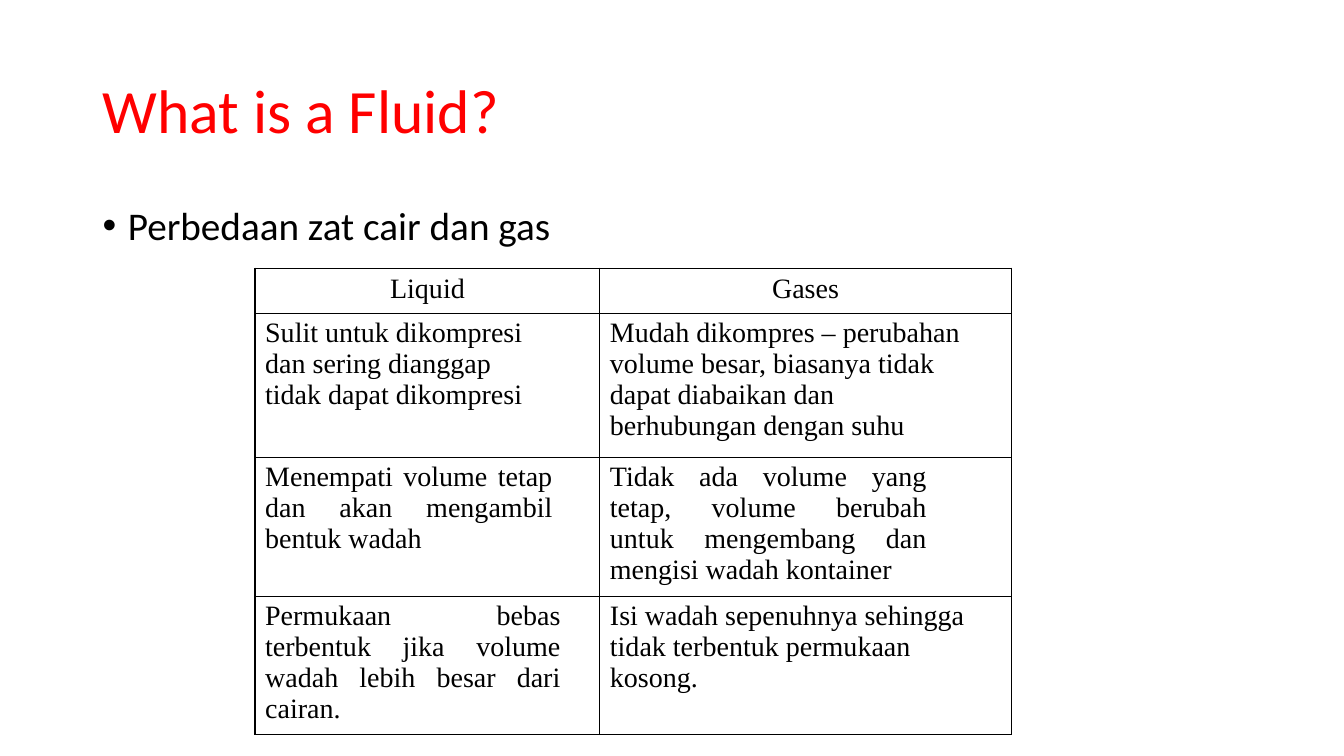
"""Build the slide that compares liquids and gases in a table."""
from lxml import etree
from pptx import Presentation
from pptx.dml.color import RGBColor
from pptx.enum.text import MSO_ANCHOR, PP_ALIGN
from pptx.oxml.ns import qn
from pptx.util import Inches, Pt

LEFT, CENTER, JUSTIFY = PP_ALIGN.LEFT, PP_ALIGN.CENTER, PP_ALIGN.JUSTIFY
MIDDLE, TOP = MSO_ANCHOR.MIDDLE, MSO_ANCHOR.TOP
BLACK, RED = "000000", "FF0000"
TITLE_FONT = {"name": "Calibri", "size": Pt(44)}
BODY_FONT = {"name": "Calibri", "size": Pt(28)}
TABLE_FONT = {"name": "Times New Roman", "size": Pt(20), "bold": False}
COLUMN_WIDTHS = [3.42, 4.08]
ROW_HEIGHTS = [0.45, 1.43, 1.1, 1.1]
# Each cell: text, alignment, left margin, right margin, top margin
ROWS = [
    [("Liquid", CENTER, 0, 0, 0.05), ("Gases", CENTER, 0, 0, 0.05)],
    [("Sulit untuk dikompresi dan sering dianggap tidak dapat dikompresi",
      LEFT, 0.1, 0.47, 0.04),
     ("Mudah dikompres – perubahan volume besar, biasanya tidak dapat "
      "diabaikan dan berhubungan dengan suhu", LEFT, 0.1, 0.4, 0.04)],
    [("Menempati volume tetap dan akan mengambil bentuk wadah",
      JUSTIFY, 0.1, 0.47, 0.04),
     ("Tidak ada volume yang tetap, volume berubah untuk mengembang dan "
      "mengisi wadah kontainer", JUSTIFY, 0.1, 0.84, 0.04)],
    [("Permukaan bebas terbentuk jika volume wadah lebih besar dari cairan.",
      JUSTIFY, 0.1, 0.39, 0.04),
     ("Isi wadah sepenuhnya sehingga tidak terbentuk permukaan kosong.",
      LEFT, 0.1, 0.4, 0.04)],
]


def color(value):
    return RGBColor.from_string(value)


def write(paragraph, text, alignment, font_values, text_color):
    paragraph.text = text
    paragraph.alignment = alignment
    for name, value in font_values.items():
        setattr(paragraph.font, name, value)
    paragraph.font.color.rgb = color(text_color)


presentation = Presentation()
presentation.slide_width = Inches(13.33)
presentation.slide_height = Inches(7.5)
slide = presentation.slides.add_slide(presentation.slide_layouts[5])

title = slide.shapes.title
title.left, title.top = Inches(0.92), Inches(0.4)
title.width, title.height = Inches(11.5), Inches(1.45)
title.text_frame.vertical_anchor = MIDDLE
title_paragraph = title.text_frame.paragraphs[0]
write(title_paragraph, "What is a Fluid?", LEFT, TITLE_FONT, RED)
title_paragraph.line_spacing = 0.9

body = slide.shapes.add_textbox(Inches(0.92), Inches(2), Inches(11.5), Inches(0.6))
body.text_frame.word_wrap = True
body_paragraph = body.text_frame.paragraphs[0]
properties = body_paragraph._p.get_or_add_pPr()
properties.set("marL", str(Inches(0.25)))
properties.set("indent", str(Inches(-0.25)))
etree.SubElement(properties, qn("a:buFont")).set("typeface", "Arial")
etree.SubElement(properties, qn("a:buChar")).set("char", "•")
write(body_paragraph, "Perbedaan zat cair dan gas", LEFT, BODY_FONT, BLACK)
body_paragraph.line_spacing = 0.9

table = slide.shapes.add_table(
    len(ROWS), len(COLUMN_WIDTHS), Inches(2.53), Inches(2.66),
    Inches(sum(COLUMN_WIDTHS)), Inches(sum(ROW_HEIGHTS))).table
table.first_row = table.horz_banding = False
for column, width in zip(table.columns, COLUMN_WIDTHS):
    column.width = Inches(width)
for row, height, contents in zip(table.rows, ROW_HEIGHTS, ROWS):
    row.height = Inches(height)
    for cell, (text, alignment, left, right, top) in zip(row.cells, contents):
        cell.margin_left, cell.margin_right = Inches(left), Inches(right)
        cell.margin_top, cell.margin_bottom = Inches(top), 0
        cell.vertical_anchor = TOP
        write(cell.text_frame.paragraphs[0], text, alignment, TABLE_FONT, BLACK)
        cell_properties = cell._tc.get_or_add_tcPr()
        for side in ("a:lnL", "a:lnR", "a:lnT", "a:lnB"):
            border = etree.SubElement(cell_properties, qn(side), w=str(Pt(1)))
            fill = etree.SubElement(border, qn("a:solidFill"))
            etree.SubElement(fill, qn("a:srgbClr"), val=BLACK)
        cell.fill.background()

presentation.save("out.pptx")
